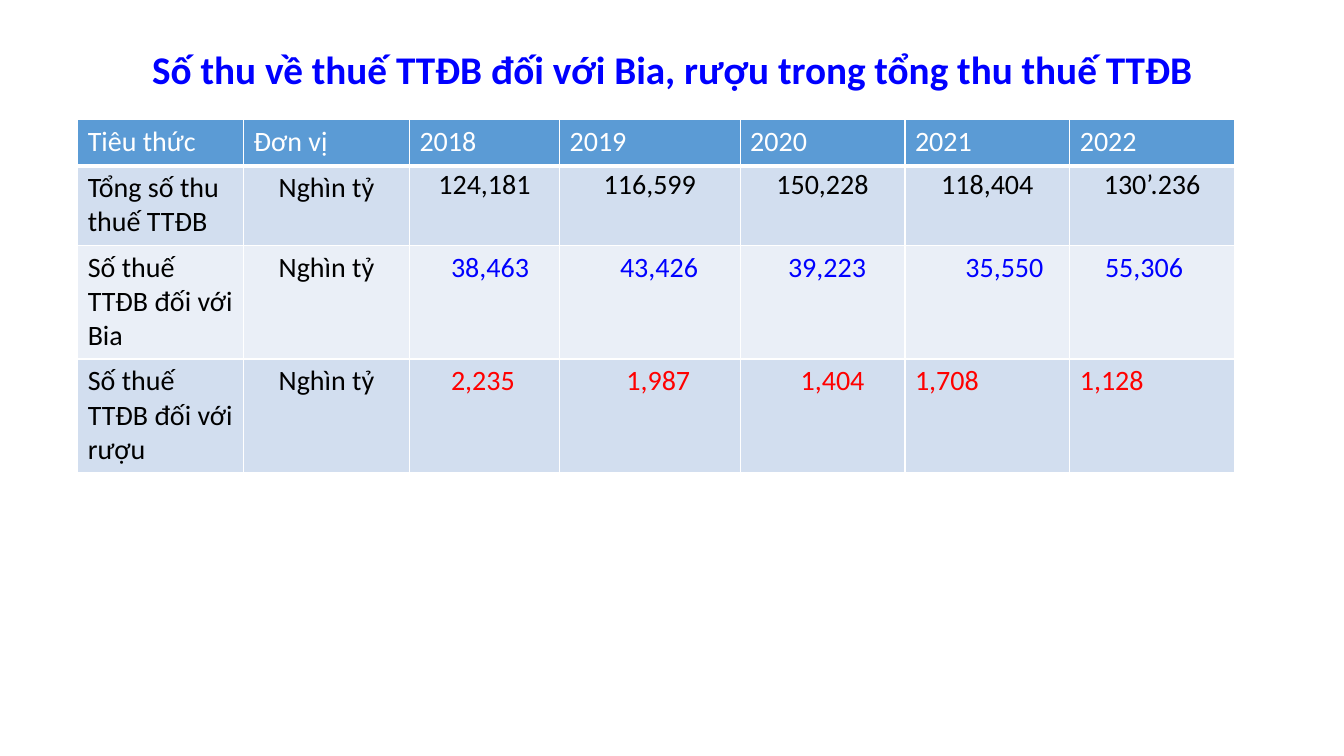
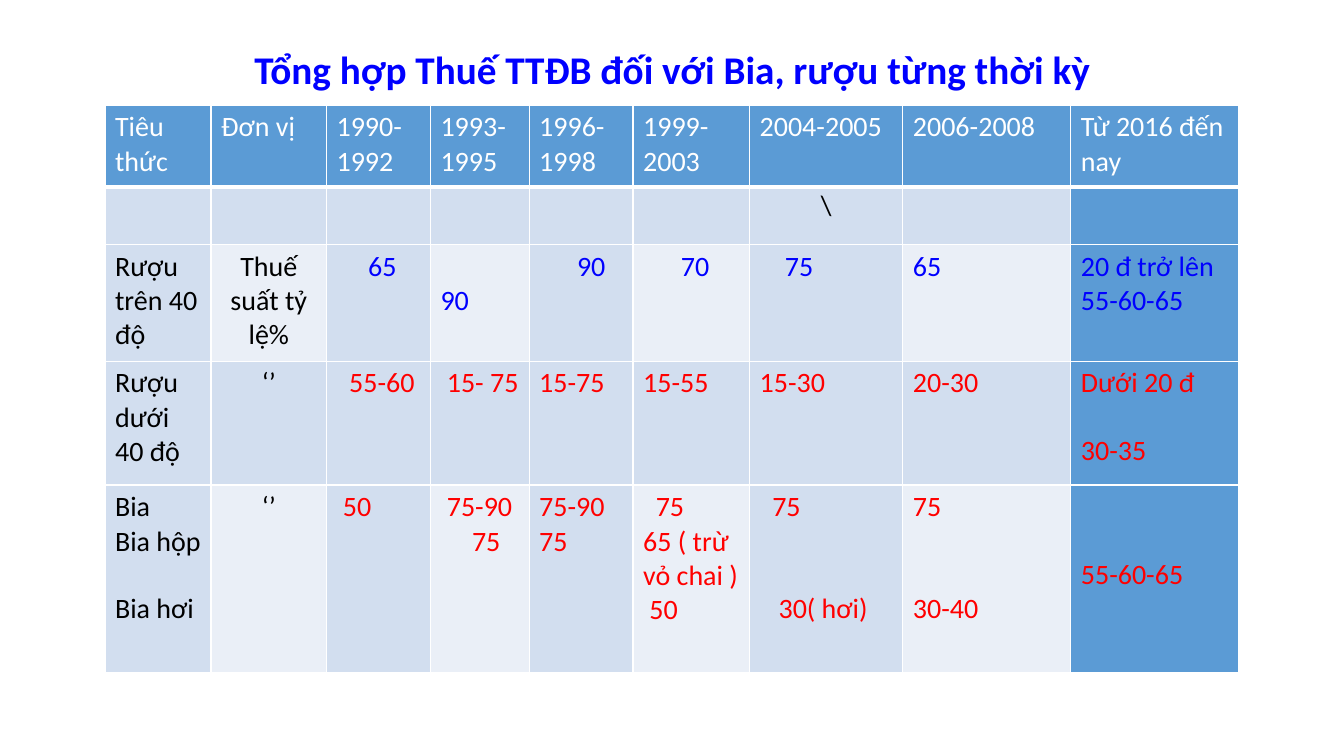
from dataclasses import dataclass

from lxml import etree
from pptx import Presentation
from pptx import util as u
from pptx.dml.color import RGBColor
from pptx.enum import text
from pptx.oxml import ns

EMU_PER_PX = 9525


@dataclass(frozen=True)
class Theme:
    font: str = "Calibri"
    title_size: int = 28
    table_size: int = 20
    line_height: int = 24
    white: str = "FFFFFF"
    black: str = "000000"
    blue: str = "0000FF"
    red: str = "FF0000"
    header: str = "5B9BD5"
    band: str = "D2DEEF"
    light_band: str = "EAEFF7"


@dataclass(frozen=True)
class Line:
    words: str
    indent: int = 0
    skip: int = 0
    snug: bool = False


@dataclass(frozen=True)
class Row:
    height: int
    cells: tuple
    ink: str


THEME = Theme()


def px(length):
    return u.Emu(length * EMU_PER_PX)


def add_run(paragraph, words, size, ink, bold=False):
    run = paragraph.add_run()
    run.text = words
    run.font.name = THEME.font
    run.font.size = u.Pt(size)
    run.font.bold = bold
    run.font.color.rgb = RGBColor.from_string(ink)


def add_title(slide, words):
    frame = slide.shapes.add_textbox(px(88), px(38), px(1104), px(61)).text_frame
    frame.word_wrap = True
    frame.vertical_anchor = text.MSO_ANCHOR.MIDDLE
    heading = frame.paragraphs[0]
    heading.alignment = text.PP_ALIGN.CENTER
    heading.line_spacing = 0.9
    add_run(heading, words, THEME.title_size, THEME.blue, bold=True)


def set_borders(cell, bottom):
    properties = cell._tc.get_or_add_tcPr()
    widths = {"lnL": 1, "lnR": 1, "lnT": 1, "lnB": bottom}
    for position, (side, width) in enumerate(widths.items()):
        border = etree.Element(ns.qn(f"a:{side}"), w=str(u.Pt(width)))
        fill = etree.SubElement(border, ns.qn("a:solidFill"))
        etree.SubElement(fill, ns.qn("a:srgbClr"), val=THEME.white)
        properties.insert(position, border)


def write_line(cell, paragraph, line, first, ink, centred):
    gap = line.skip * THEME.line_height
    if gap and first:
        cell.margin_top = px(5) + u.Pt(gap)
    elif gap:
        paragraph.space_before = u.Pt(gap)
    if line.indent:
        paragraph._p.get_or_add_pPr().set("marL", str(px(line.indent)))
    if line.snug:
        cell.margin_left = cell.margin_right = px(7)
        cell.margin_top = cell.margin_bottom = 0
        paragraph.line_spacing = 1.07
        paragraph.space_after = u.Pt(8)
    if centred or line.snug:
        paragraph.alignment = text.PP_ALIGN.CENTER
    add_run(paragraph, line.words, THEME.table_size, ink)


def fill_cell(cell, content, background, ink, centred, bottom):
    cell.fill.solid()
    cell.fill.fore_color.rgb = RGBColor.from_string(background)
    set_borders(cell, bottom)
    lines = content if isinstance(content, tuple) else (content,)
    for index, entry in enumerate(lines):
        if not entry:
            continue
        line = Line(entry) if isinstance(entry, str) else entry
        frame = cell.text_frame
        paragraph = frame.add_paragraph() if index else frame.paragraphs[0]
        write_line(cell, paragraph, line, index == 0, ink, centred)


def add_tax_table(slide, left, top, widths, rows, background):
    height = sum(row.height for row in rows)
    table = slide.shapes.add_table(
        len(rows), len(widths), px(left), px(top), px(sum(widths)), px(height)
    ).table
    table.horz_banding = False
    for column, width in zip(table.columns, widths):
        column.width = px(width)
    for r, row in enumerate(rows):
        table.rows[r].height = px(row.height)
        for c, content in enumerate(row.cells):
            is_header = r == 0
            fill_cell(
                table.cell(r, c),
                content,
                THEME.header if is_header else background(r, c),
                THEME.black if c < 2 and not is_header else row.ink,
                centred=c == 1 and not is_header,
                bottom=3 if is_header else 1,
            )


def revenue_background(row, column):
    return THEME.band if row % 2 else THEME.light_band


def rate_background(row, column):
    if column == 8:
        return THEME.header
    return THEME.light_band if row % 2 == 0 and column % 2 else THEME.band


def add_revenue_slide(slide):
    add_title(slide, "Số thu về thuế TTĐB đối với Bia, rượu trong tổng thu thuế TTĐB")
    totals = ("124,181", "116,599", "150,228", "118,404", "130’.236")
    rows = (
        Row(44, ("Tiêu thức", "Đơn vị", "2018", "2019", "2020", "2021", "2022"), THEME.white),
        Row(76, ("Tổng số thu thuế TTĐB", "Nghìn tỷ",
                 *(Line(total, snug=True) for total in totals)), THEME.black),
        Row(108, ("Số thuế TTĐB đối với Bia", "Nghìn tỷ", Line("38,463", 30),
                  Line("43,426", 48), Line("39,223", 36), Line("35,550", 48),
                  Line("55,306", 24)), THEME.blue),
        Row(108, ("Số thuế TTĐB đối với rượu", "Nghìn tỷ", Line("2,235", 30),
                  Line("1,987", 54), Line("1,404", 48), "1,708", "1,128"), THEME.red),
    )
    widths = (158, 158, 143, 172, 157, 157, 157)
    add_tax_table(slide, 74, 114, widths, rows, revenue_background)


def add_rate_slide(slide):
    add_title(slide, "Tổng hợp Thuế TTĐB đối với Bia, rượu từng thời kỳ")
    rows = (
        Row(78, ("Tiêu thức", "Đơn vị", "1990-1992", "1993-1995", "1996-1998", "1999-2003",
                 "2004-2005", "2006-2008", "Từ 2016 đến nay"), THEME.white),
        Row(55, ("", "", "", "", "", "", Line("\\", snug=True), "", ""), THEME.black),
        Row(111, ("Rượu trên 40 độ", "Thuế suất tỷ lệ%", Line("65", 30), Line("90", skip=1),
                  Line("90", 36), Line("70", 36), Line("75", 24), "65",
                  ("20 đ trở lên", "55-60-65")), THEME.blue),
        Row(118, ("Rượu dưới 40 độ", "‘’", Line("55-60", 12), Line("15- 75", 6), "15-75",
                  "15-55", "15-30", "20-30",
                  ("Dưới 20 đ", Line("30-35", skip=1))), THEME.red),
        Row(179, (("Bia", "Bia hộp", Line("Bia hơi", skip=1)), "‘’", Line("50", 6),
                  (Line("75-90", 6), Line("75", 30)), ("75-90", "75"),
                  (Line("75", 12), "65 ( trừ vỏ chai )", Line("50", 6)),
                  (Line("75", 12), Line("30( hơi)", 18, skip=2)),
                  ("75", Line("30-40", skip=2)), Line("55-60-65", skip=2)), THEME.red),
    )
    widths = (101, 110, 99, 94, 99, 111, 146, 160, 160)
    add_tax_table(slide, 100, 100, widths, rows, rate_background)


def main():
    deck = Presentation()
    deck.slide_width, deck.slide_height = px(1280), px(720)
    blank = deck.slide_layouts[6]
    for build in (add_revenue_slide, add_rate_slide):
        build(deck.slides.add_slide(blank))
    deck.save("out.pptx")


if __name__ == "__main__":
    main()
